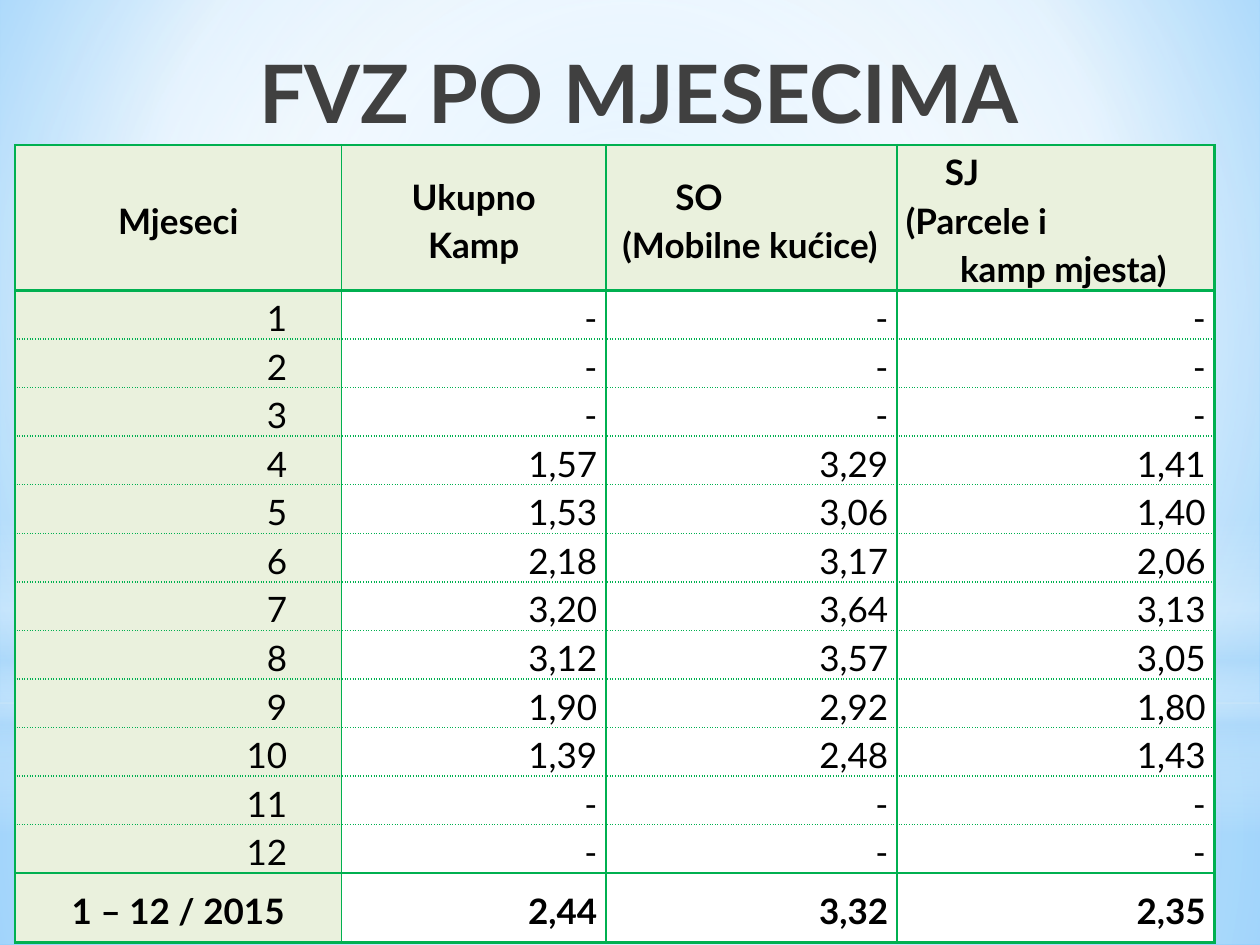
import pptx
import pptx.util
import pptx.dml.color
import pptx.enum.shapes
import pptx.enum.text
import pptx.oxml
import pptx.oxml.ns

Inches, Pt = pptx.util.Inches, pptx.util.Pt
qn = pptx.oxml.ns.qn
ALIGN, ANCHOR = pptx.enum.text.PP_ALIGN, pptx.enum.text.MSO_ANCHOR
SHAPE = pptx.enum.shapes.MSO_SHAPE

FONT = "Lato"
WIDTH, HEIGHT = 10, 7.5
COLORS = {
    "title": "404040", "text": "000000", "border": "00B050",
    "label": "EAF1DD", "white": "FFFFFF", "haze": "B4DCFA",
    "sky": "9ED5FF", "deep": "5BB9FF",
}
TITLE = "FVZ PO MJESECIMA"
HEADERS = [
    [("Mjeseci", None)],
    [("Ukupno", None), ("Kamp", None)],
    [("SO", 0.48), ("(Mobilne kućice)", 0.06)],
    [("SJ", 0.31), ("(Parcele i", 0), ("kamp mjesta)", 0.43)],
]
MONTHS = [
    ("-", "-", "-"), ("-", "-", "-"), ("-", "-", "-"),
    ("1,57", "3,29", "1,41"), ("1,53", "3,06", "1,40"), ("2,18", "3,17", "2,06"),
    ("3,20", "3,64", "3,13"), ("3,12", "3,57", "3,05"), ("1,90", "2,92", "1,80"),
    ("1,39", "2,48", "1,43"), ("-", "-", "-"), ("-", "-", "-"),
]
TOTAL = ("1 – 12 / 2015", "2,44", "3,32", "2,35")
COLUMNS = [2.59, 2.1, 2.31, 2.52]
ROWS = [1.15] + [0.38] * len(MONTHS) + [0.55]

CENTER = (50, 50, 50, 50)
SKY = ([(0, "sky", 100), (60, "white", 100), (100, "deep", 100)], (20, 10, 20, 60))
LAYERS = [
    (SHAPE.RECTANGLE, 5.58, 1.92,
     [(0, "white", 91), (37, "white", 76), (100, "haze", 79)], CENTER),
    (SHAPE.RECTANGLE, 0, 5.58,
     [(0, "white", 89), (48, "white", 62), (100, "haze", 79)], CENTER),
    (SHAPE.RECTANGLE, 4.12, 2.5,
     [(0, "white", 0), (29, "white", 30), (45, "haze", 40), (55, "white", 26),
      (65, "haze", 60), (100, "white", 0)], None),
    (SHAPE.OVAL, 1.75, 5.58, [(0, "white", 100), (56, "white", 0)], CENTER),
]


def color(name):
    return pptx.dml.color.RGBColor.from_string(COLORS[name])


def apply_gradient(fill, properties, stops, focus):
    fill.solid()
    stop_xml = "".join(
        f'<a:gs pos="{position * 1000}"><a:srgbClr val="{COLORS[name]}">'
        f'<a:alpha val="{alpha * 1000}"/></a:srgbClr></a:gs>'
        for position, name, alpha in stops)
    direction = '<a:lin ang="5400000" scaled="0"/>'
    if focus:
        sides = " ".join(f'{side}="{share * 1000}"' for side, share in zip("ltrb", focus))
        direction = f'<a:path path="circle"><a:fillToRect {sides}/></a:path>'
    gradient = pptx.oxml.parse_xml(
        f'<a:gradFill {pptx.oxml.ns.nsdecls("a")} rotWithShape="1">'
        f'<a:gsLst>{stop_xml}</a:gsLst>{direction}</a:gradFill>')
    properties.replace(properties.find(qn("a:solidFill")), gradient)


def set_borders(cell, row, column):
    last_row, last_column = len(ROWS) - 1, len(COLUMNS) - 1
    borders = {
        "L": (1.5 if column == 0 else 1, "solid"),
        "R": (1.5 if column == last_column else 1, "solid"),
        "T": (1.5, "solid") if row in (0, 1, last_row) else (1, "sysDot"),
        "B": (1.5, "solid") if row in (0, last_row - 1, last_row) else (1, "sysDot"),
    }
    properties = cell._tc.get_or_add_tcPr()
    for side, (width, dash) in borders.items():
        properties.append(pptx.oxml.parse_xml(
            f'<a:ln{side} {pptx.oxml.ns.nsdecls("a")} w="{Pt(width)}"><a:solidFill>'
            f'<a:srgbClr val="{COLORS["border"]}"/></a:solidFill>'
            f'<a:prstDash val="{dash}"/></a:ln{side}>'))


def fill_cell(cell, lines, row, column):
    is_header, is_total = row == 0, row == len(ROWS) - 1
    is_month = column == 0 and not (is_header or is_total)
    set_borders(cell, row, column)
    cell.fill.solid()
    cell.fill.fore_color.rgb = color("label" if is_header or column == 0 else "white")
    cell.margin_left = Inches(0.07)
    cell.margin_right = Inches(0.43 if is_month else 0.07)
    cell.margin_top = cell.margin_bottom = 0
    cell.vertical_anchor = ANCHOR.MIDDLE if is_header or is_total else ANCHOR.BOTTOM
    cell.text_frame.text = "\n".join(text for text, indent in lines)
    for paragraph, (text, indent) in zip(cell.text_frame.paragraphs, lines):
        centered = is_header or (is_total and column == 0)
        paragraph.alignment = ALIGN.CENTER if centered else ALIGN.RIGHT
        if indent is not None:
            paragraph.alignment = ALIGN.LEFT
            paragraph._p.get_or_add_pPr().set("marL", str(Inches(indent)))
        paragraph.line_spacing = 1.15
        if is_total and column:
            paragraph.space_after = Pt(10)
        paragraph.font.name = FONT
        paragraph.font.size = Pt(20)
        paragraph.font.bold = is_header or is_total
        paragraph.font.color.rgb = color("text")


def add_backdrop(slide):
    fill = slide.background.fill
    fill.solid()
    apply_gradient(fill, slide.element.find(".//" + qn("p:bgPr")), *SKY)
    for kind, top, height, stops, focus in LAYERS:
        shape = slide.shapes.add_shape(kind, 0, Inches(top), Inches(WIDTH), Inches(height))
        shape.shadow.inherit = False
        shape.line.fill.background()
        apply_gradient(shape.fill, shape.element.spPr, stops, focus)


def add_title(slide):
    title = slide.shapes.title
    title.element.getparent().append(title.element)
    title.left, title.top = Inches(1.06), Inches(0.29)
    title.width, title.height = Inches(7.12), Inches(1.25)
    title.text_frame.text = TITLE
    title.text_frame.vertical_anchor = ANCHOR.TOP
    paragraph = title.text_frame.paragraphs[0]
    paragraph.alignment = ALIGN.RIGHT
    paragraph.line_spacing = 1.0
    paragraph.space_before = Pt(0)
    paragraph.font.name = FONT
    paragraph.font.size = Pt(46)
    paragraph.font.bold = True
    paragraph.font.color.rgb = color("title")


def add_month_table(slide):
    records = [(str(month), *values) for month, values in enumerate(MONTHS, 1)] + [TOTAL]
    content = [HEADERS] + [[[(text, None)] for text in record] for record in records]
    table = slide.shapes.add_table(
        len(ROWS), len(COLUMNS), Inches(0.12), Inches(1.15),
        Inches(sum(COLUMNS)), Inches(sum(ROWS))).table
    for column, width in zip(table.columns, COLUMNS):
        column.width = Inches(width)
    for row, height in zip(table.rows, ROWS):
        row.height = Inches(height)
    for row, cells in enumerate(content):
        for column, lines in enumerate(cells):
            fill_cell(table.cell(row, column), lines, row, column)


def main():
    presentation = pptx.Presentation()
    presentation.slide_width, presentation.slide_height = Inches(WIDTH), Inches(HEIGHT)
    slide = presentation.slides.add_slide(presentation.slide_layouts[5])
    add_backdrop(slide)
    add_title(slide)
    add_month_table(slide)
    presentation.save("out.pptx")


if __name__ == "__main__":
    main()
